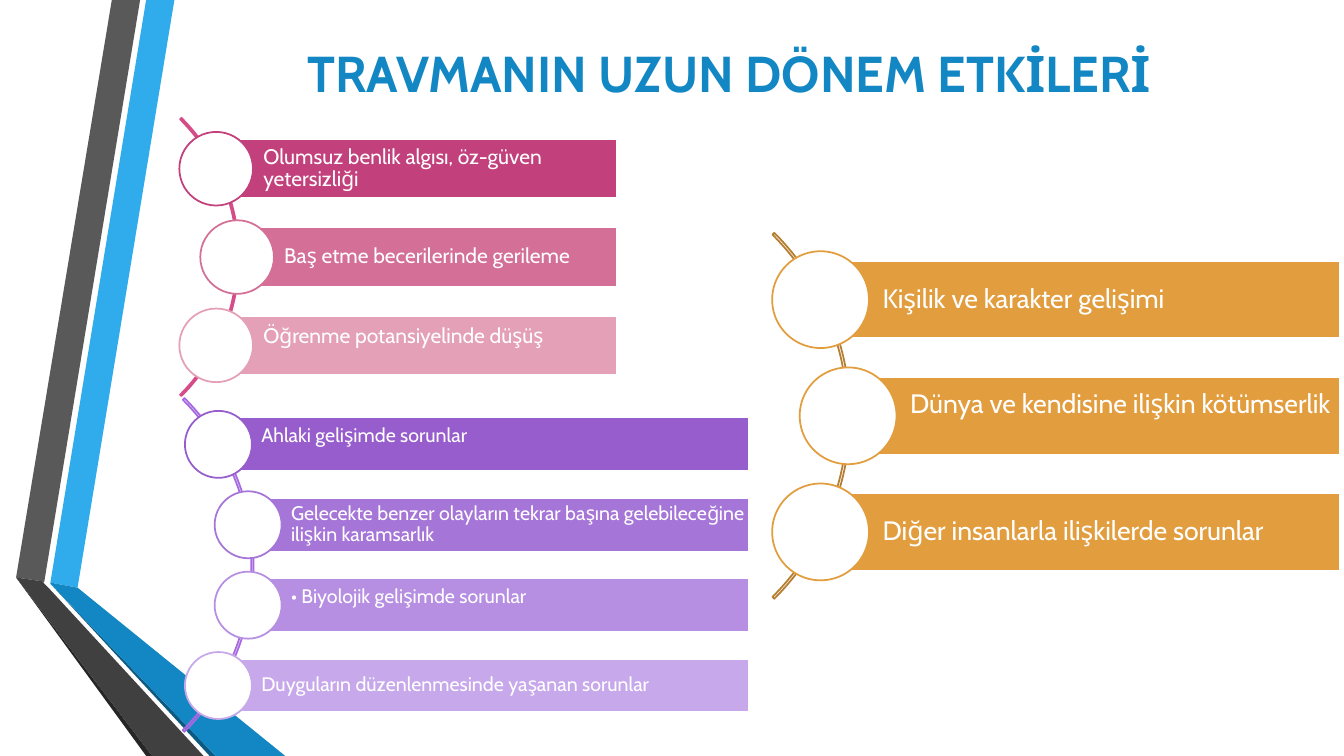
from dataclasses import dataclass
from math import sqrt

from pptx import Presentation
from pptx.dml.color import RGBColor
from pptx.enum.shapes import MSO_SHAPE
from pptx.enum.text import MSO_ANCHOR, PP_ALIGN
from pptx.util import Inches, Pt


@dataclass(frozen=True)
class Theme:
    font: str = "Cabin"
    white: str = "FFFFFF"
    title: str = "1287C3"
    orange: str = "E29D3E"
    orange_arc: str = "B57E32"
    purples: tuple = ("975DCC", "A675D8", "B68FE2", "C7A9EB")
    purple_arc: str = "A769E1"
    pinks: tuple = ("C2407B", "D46F97", "E4A0B7")
    pink_arc: str = "D64C89"
    title_size: int = 36
    large: int = 19
    medium: int = 15
    small: int = 14
    outline: float = 1.25


THEME = Theme()

RIBBON_FACES = [
    ("30ACEC", [(0.5, 5.78), (0.77, 5.83), (1.73, 0), (1.45, 0)]),
    ("595959", [(1.39, 0), (1.11, 0), (0.16, 5.73), (0.44, 5.77)]),
    ("262626", [(0.16, 5.73), (1.45, 7.5), (1.51, 7.5)]),
    ("0C5A82", [(0.5, 5.79), (2.08, 7.5), (2.14, 7.5)]),
    ("1287C3", [(0.5, 5.79), (2.14, 7.5), (2.83, 7.5), (0.77, 5.83), (0.5, 5.78)]),
    ("404040", [(2.02, 7.5), (0.48, 5.83), (0.43, 5.78), (0.44, 5.77),
                (0.16, 5.73), (1.51, 7.5)]),
]


def color(value):
    return RGBColor.from_string(value)


def paint(shape, fill=None, line=None):
    shape.shadow.inherit = False
    if fill:
        shape.fill.solid()
        shape.fill.fore_color.rgb = color(fill)
    else:
        shape.fill.background()
    if line:
        shape.line.color.rgb = color(line)
        shape.line.width = Pt(THEME.outline)
    else:
        shape.line.fill.background()


def write(paragraph, text, size, ink, bold=False):
    run = paragraph.add_run()
    run.text = text
    run.font.name = THEME.font
    run.font.size = Pt(size)
    run.font.bold = bold
    run.font.color.rgb = color(ink)


def add_preset(slide, preset, left, top, width, height):
    return slide.shapes.add_shape(
        preset, Inches(left), Inches(top), Inches(width), Inches(height))


def add_ribbons(slide, box):
    left, top = box
    for fill, corners in RIBBON_FACES:
        points = [(Inches(left + x), Inches(top + y)) for x, y in corners]
        outline = slide.shapes.build_freeform(*points[0])
        outline.add_line_segments(points[1:], close=True)
        paint(outline.convert_to_shape(), fill)


def add_heading(slide, box, text):
    heading = slide.shapes.title
    heading.left, heading.top, heading.width, heading.height = map(Inches, box)
    heading.text_frame.vertical_anchor = MSO_ANCHOR.MIDDLE
    paragraph = heading.text_frame.paragraphs[0]
    paragraph.alignment = PP_ALIGN.CENTER
    write(paragraph, text, THEME.title_size, THEME.title, bold=True)


def add_bar(slide, box, text, size, fill, raised):
    bar = add_preset(slide, MSO_SHAPE.RECTANGLE, *box)
    paint(bar, fill, THEME.white)
    frame = bar.text_frame
    frame.word_wrap = True
    frame.vertical_anchor = MSO_ANCHOR.MIDDLE
    frame.margin_left = Inches(0.8 * box[3])
    frame.margin_top = frame.margin_right = frame.margin_bottom = Inches(0.04)
    if raised:
        frame.margin_bottom += Pt(size)
    paragraph = frame.paragraphs[0]
    paragraph.alignment = PP_ALIGN.LEFT
    paragraph.line_spacing = 1.0 if raised else 0.9
    write(paragraph, text, size, THEME.white)


def add_chain(slide, box, effects, size, fills, arc_color):
    left, top, width, height = box
    radius = height / sqrt(2)
    center_x, center_y = left - height / 2, top + height / 2
    pitch = height / (len(effects) + 0.15)
    bar_height = pitch * 2 / 3
    diameter = bar_height * 1.25

    arc = add_preset(slide, MSO_SHAPE.BLOCK_ARC, center_x - radius,
                     center_y - radius, 2 * radius, 2 * radius)
    for index, value in enumerate((189, 27, 0.005)):
        arc.adjustments[index] = value
    paint(arc, line=arc_color)

    for index, ((text, raised), fill) in enumerate(zip(effects, fills)):
        offset = (index - (len(effects) - 1) / 2) * pitch
        node_x = center_x + sqrt(radius ** 2 - offset ** 2) - 0.02
        node_y = center_y + offset
        bar_box = (node_x, node_y - bar_height / 2,
                   left + width - node_x, bar_height)
        add_bar(slide, bar_box, text, size, fill, raised)
        node = add_preset(slide, MSO_SHAPE.OVAL, node_x - diameter / 2,
                          node_y - diameter / 2, diameter, diameter)
        paint(node, THEME.white, fill)


def main():
    deck = Presentation()
    deck.slide_width, deck.slide_height = Inches(13.33), Inches(7.5)
    slide = deck.slides.add_slide(deck.slide_layouts[5])

    add_ribbons(slide, (0, 0))
    add_heading(slide, (2.72, 0.12, 9.02, 1.19), "TRAVMANIN UZUN DÖNEM ETKİLERİ")
    add_chain(slide, (7.68, 2.31, 5.61, 3.63), [
        ("Kişilik ve karakter gelişimi", False),
        ("Dünya ve kendisine ilişkin kötümserlik", True),
        ("Diğer insanlarla ilişkilerde sorunlar", False),
    ], THEME.large, [THEME.orange] * 3, THEME.orange_arc)
    add_chain(slide, (1.83, 3.95, 5.6, 3.31), [
        ("Ahlaki gelişimde sorunlar", True),
        ("Gelecekte benzer olayların tekrar başına gelebileceğine "
         "ilişkin karamsarlık", False),
        ("• Biyolojik gelişimde sorunlar", True),
        ("Duyguların düzenlenmesinde yaşanan sorunlar", False),
    ], THEME.small, THEME.purples, THEME.purple_arc)
    add_chain(slide, (1.8, 1.17, 4.32, 2.76), [
        ("Olumsuz benlik algısı, öz-güven yetersizliği", False),
        ("Baş etme becerilerinde gerileme", False),
        ("Öğrenme potansiyelinde düşüş", True),
    ], THEME.medium, THEME.pinks, THEME.pink_arc)

    deck.save("out.pptx")


if __name__ == "__main__":
    main()
